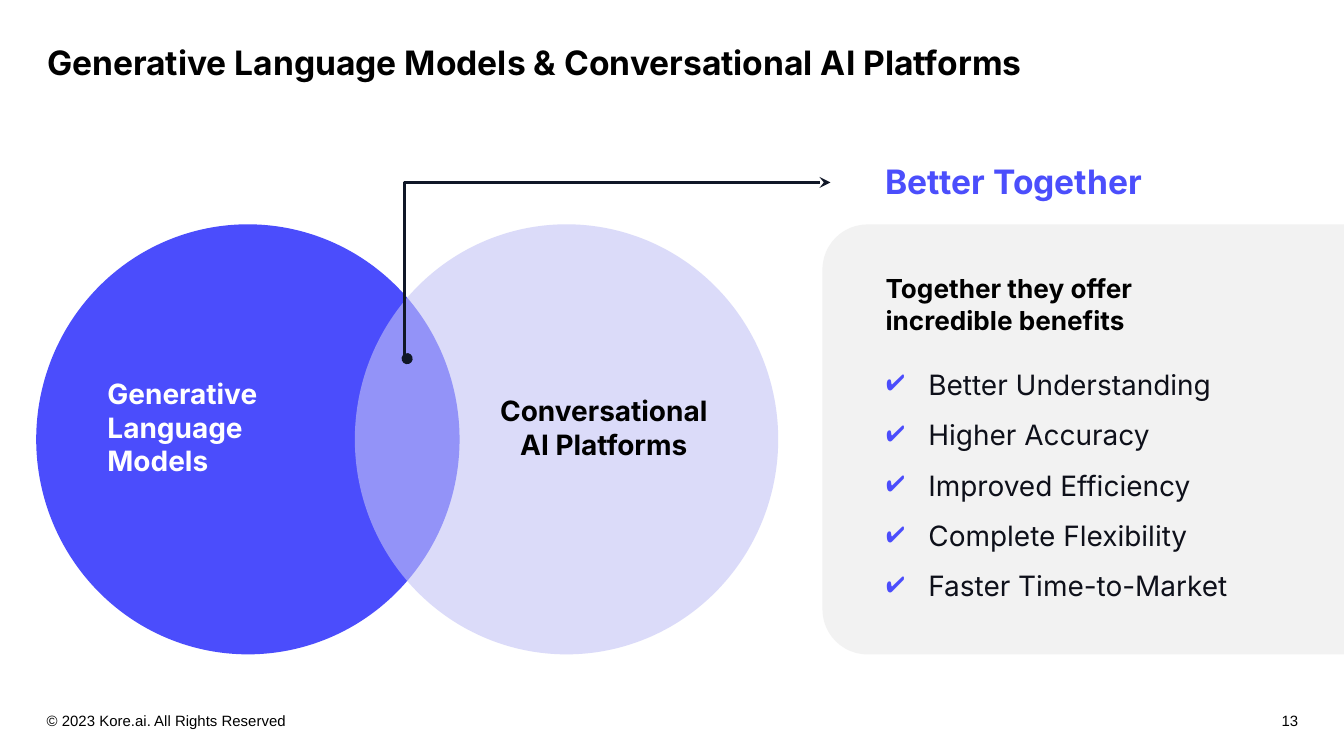
import pptx
import pptx.util
import pptx.dml.color
import pptx.enum.shapes
import pptx.enum.text
import pptx.oxml
import pptx.oxml.ns

Pt = pptx.util.Pt
MSO_SHAPE = pptx.enum.shapes.MSO_SHAPE
ANCHOR = pptx.enum.text.MSO_ANCHOR
ALIGN = pptx.enum.text.PP_ALIGN
INDIGO = "4B4DFC"
BENEFITS = [
    "Better Understanding",
    "Higher Accuracy",
    "Improved Efficiency",
    "Complete Flexibility",
    "Faster Time-to-Market",
]


def rgb(value):
    """Return the colour for a hex string."""
    return pptx.dml.color.RGBColor.from_string(value)


def element(tag, **attrs):
    """Return a new DrawingML element with the given attributes."""
    el = pptx.oxml.parse_xml(f"<a:{tag} {pptx.oxml.ns.nsdecls('a')}/>")
    for name, value in attrs.items():
        el.set(name, str(value))
    return el


def add_check(p):
    """Give a paragraph a hanging check mark bullet."""
    pPr = p._p.get_or_add_pPr()
    pPr.set("marL", str(Pt(30.2)))
    pPr.set("indent", str(Pt(-22.5)))
    colour = element("buClr")
    colour.append(element("srgbClr", val=INDIGO))
    pPr.append(colour)
    pPr.append(element("buChar", char="✔"))


def write(sp, text, size=15, color="000000", bold=False, font="Inter", align=ALIGN.LEFT,
          anchor=ANCHOR.TOP, insets=(5, 5, 5, 5), spacing=None, checks=False):
    """Write one paragraph per line of text into a shape."""
    tf = sp.text_frame
    tf.word_wrap = True
    tf.vertical_anchor = anchor
    tf.margin_left, tf.margin_top, tf.margin_right, tf.margin_bottom = map(Pt, insets)
    for i, line in enumerate(text.split("\n")):
        p = tf.add_paragraph() if i else tf.paragraphs[0]
        if checks:
            add_check(p)
        p.alignment = align
        if spacing:
            p.line_spacing = spacing
        r = p.add_run()
        r.text = line
        r.font.name, r.font.size, r.font.bold = font, Pt(size), bold
        r.font.color.rgb = rgb(color)


def add_text(s, x, y, w, h, text, **fmt):
    """Add a text box."""
    write(s.shapes.add_textbox(Pt(x), Pt(y), Pt(w), Pt(h)), text, **fmt)


def add_shape(s, kind, x, y, w, h, fill):
    """Add a filled shape without outline or shadow."""
    sp = s.shapes.add_shape(kind, Pt(x), Pt(y), Pt(w), Pt(h))
    sp.shadow.inherit = False
    sp.fill.solid()
    sp.fill.fore_color.rgb = rgb(fill)
    sp.line.fill.background()
    return sp


def add_pointer(s, x1, y1, x2, y2):
    """Add an elbow arrow that starts with a dot."""
    cx = s.shapes.add_connector(pptx.enum.shapes.MSO_CONNECTOR.ELBOW,
                                Pt(x1), Pt(y1), Pt(x2), Pt(y2))
    cx.line.color.rgb = rgb("101727")
    cx.line.width = Pt(1.5)
    ln = cx.line._get_or_add_ln()
    ln.append(element("headEnd", type="oval"))
    ln.append(element("tailEnd", type="stealth"))
    spPr = cx._element.spPr
    spPr.append(element("effectLst"))
    guides = spPr.find(pptx.oxml.ns.qn("a:prstGeom")).get_or_add_avLst()
    guides.append(element("gd", name="adj1", fmla="val -700"))


def title(s, x, y, w, h):
    """Place the slide title."""
    add_text(s, x, y, w, h, "Generative Language Models & Conversational AI Platforms",
             size=18, bold=True, insets=(5, 3, 5, 3))


def venn(s, x, y, w, h):
    """Place two overlapping circles and the arrow from their overlap."""
    d = 226.8
    x2 = x + w - d
    left = add_shape(s, MSO_SHAPE.OVAL, x, y, d, h, INDIGO)
    write(left, "Generative Language Models", color="FFFFFF", bold=True,
          anchor=ANCHOR.MIDDLE, insets=(5, 5, 47, 18))
    right = add_shape(s, MSO_SHAPE.OVAL, x2, y, d, h, "C3C3F6")
    fill = right._element.spPr.find(pptx.oxml.ns.qn("a:solidFill"))
    fill[0].append(element("alpha", val=60000))
    write(right, "Conversational AI Platforms", bold=True, align=ALIGN.CENTER,
          anchor=ANCHOR.MIDDLE, insets=(41, 5, 1, 18))
    add_pointer(s, x2 + 28, y + 72, x + w + 28, y - 22.4)


def benefits(s, x, y, w, h):
    """Place the panel of benefits with its heading above."""
    panel = add_shape(s, MSO_SHAPE.ROUND_2_SAME_RECTANGLE,
                      x + (w - h) / 2, y + (h - w) / 2, h, w, "F2F2F2")
    panel.rotation = 270
    panel.adjustments[0] = 0.105
    add_text(s, x + 28.8, y - 38.8, 157, 32.4, "Better Together",
             size=18, color="4B4EFC", bold=True)
    add_text(s, x + 28.8, y + 20.9, 170, 44.6, "Together they offer incredible benefits",
             size=14, bold=True)
    add_text(s, x + 21.6, y + 62.7, 211, 146.9, "\n".join(BENEFITS),
             color="0E101A", spacing=1.5, checks=True)


def footer(s, x, y, w, h):
    """Place the copyright line and the page number."""
    fmt = dict(size=8, font="Arial", anchor=ANCHOR.BOTTOM, insets=(5, 3, 5, 3))
    add_text(s, x, y, 222.5, h, "© 2023 Kore.ai. All Rights Reserved", **fmt)
    add_text(s, x + w - 54, y, 54, h, "13", align=ALIGN.RIGHT, **fmt)


def main():
    """Build and save the slide."""
    prs = pptx.Presentation()
    prs.slide_width, prs.slide_height = Pt(720), Pt(405)
    s = prs.slides.add_slide(prs.slide_layouts[6])
    title(s, 20.2, 19.4, 619, 35.3)
    venn(s, 19.4, 120.2, 397.5, 230.4)
    benefits(s, 440.6, 120.2, 279.4, 230.4)
    footer(s, 20, 378, 680.5, 15.8)
    prs.save("out.pptx")


if __name__ == "__main__":
    main()
